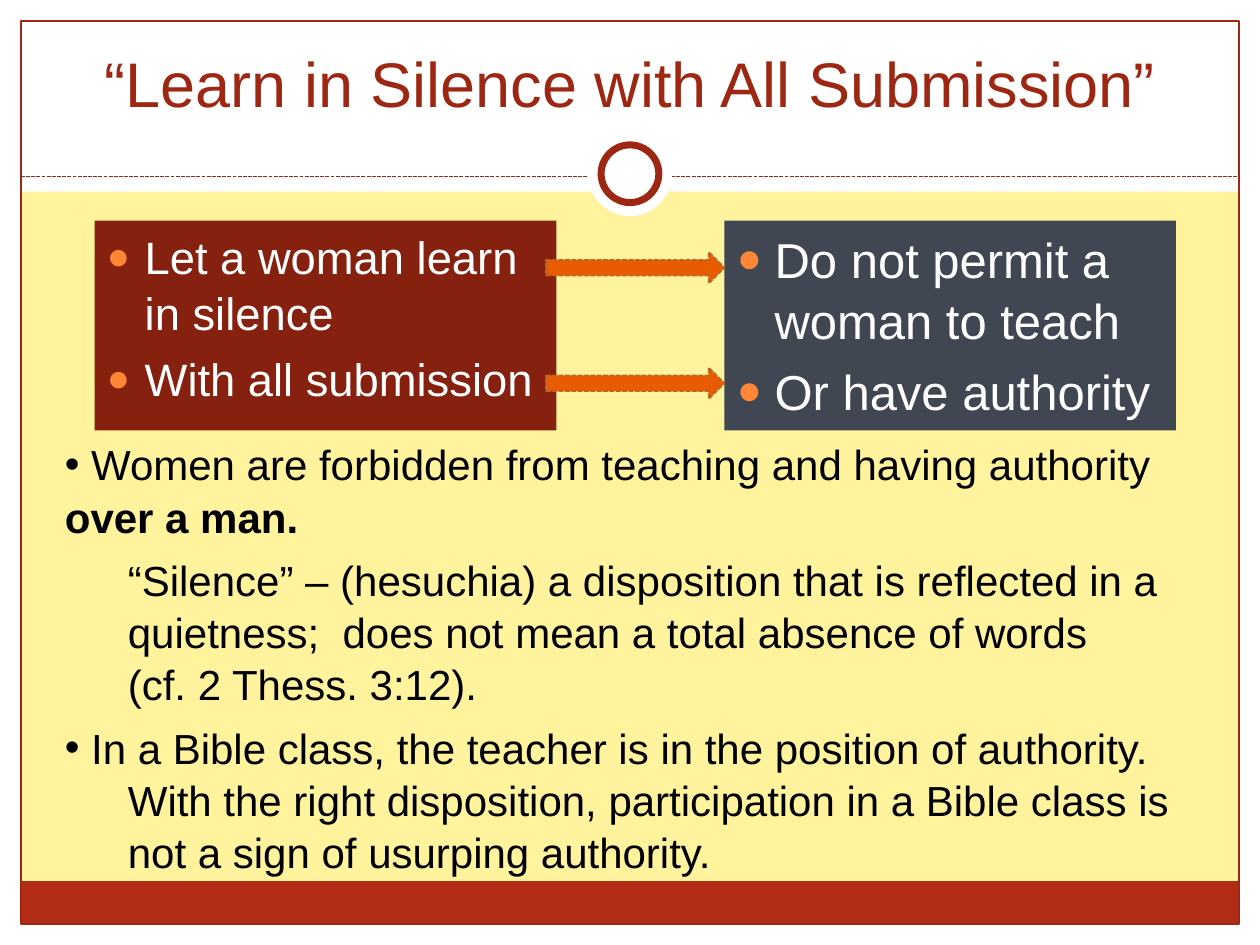
from dataclasses import dataclass
from typing import Optional

from lxml import etree
from pptx import Presentation
from pptx import util as u
from pptx.dml.color import RGBColor
from pptx.enum import dml, shapes, text
from pptx.oxml.ns import qn

WHITE = RGBColor(0xFF, 0xFF, 0xFF)
BLACK = RGBColor(0x00, 0x00, 0x00)
CREAM = RGBColor(0xFF, 0xF3, 0x9D)
RUST = RGBColor(0xB3, 0x2C, 0x16)
RUST_LINE = RGBColor(0x9E, 0x27, 0x13)
MAROON = RGBColor(0x86, 0x21, 0x10)
SLATE = RGBColor(0x41, 0x47, 0x52)
ORANGE = RGBColor(0xE7, 0x5C, 0x01)
ORANGE_LINE = RGBColor(0xBC, 0x63, 0x29)
BULLET = RGBColor(0xFE, 0x86, 0x37)

WIDTH, HEIGHT, MARGIN = 720, 540, 12
RULE_TOP = 100.8
FONT = "Arial"
LINE_SPACING = 1.04
RECT = shapes.MSO_SHAPE.RECTANGLE
OVAL = shapes.MSO_SHAPE.OVAL
ARROW = shapes.MSO_SHAPE.RIGHT_ARROW
DASH = dml.MSO_LINE.SQUARE_DOT


@dataclass
class Figure:
    kind: int
    left: float
    top: float
    width: float
    height: float
    fill: Optional[RGBColor] = None
    line: Optional[RGBColor] = None
    weight: float = 0.75
    dash: Optional[int] = None


@dataclass
class Line:
    words: str
    bullet: str = ""
    margin: float = 0
    hanging: float = 0
    bold_tail: str = ""


@dataclass
class Block:
    top: float
    height: float
    lines: list[Line]


@dataclass
class Panel:
    figure: Figure
    size: float
    points: list[str]


def draw_figure(page, figure: Figure):
    shape = page.shapes.add_shape(
        figure.kind, u.Pt(figure.left), u.Pt(figure.top),
        u.Pt(figure.width), u.Pt(figure.height))
    shape.shadow.inherit = False
    if figure.fill is None:
        shape.fill.background()
    else:
        shape.fill.solid()
        shape.fill.fore_color.rgb = figure.fill
    if figure.line is None:
        shape.line.fill.background()
    else:
        shape.line.color.rgb = figure.line
        shape.line.width = u.Pt(figure.weight)
        if figure.dash is not None:
            shape.line.dash_style = figure.dash
    return shape


def draw_rule(page) -> None:
    rule = page.shapes.add_connector(
        shapes.MSO_CONNECTOR.STRAIGHT, u.Pt(MARGIN), u.Pt(RULE_TOP),
        u.Pt(WIDTH - MARGIN), u.Pt(RULE_TOP))
    rule.line.color.rgb = RUST_LINE
    rule.line.width = u.Pt(0.75)
    rule.line.dash_style = DASH
    etree.SubElement(rule._element.spPr, qn("a:effectLst"))


def set_bullet(para, line: Line, color: Optional[RGBColor]) -> None:
    properties = para._p.get_or_add_pPr()
    properties.set("marL", str(u.Pt(line.margin)))
    properties.set("indent", str(u.Pt(-line.hanging)))
    if not line.bullet:
        return
    if color is not None:
        holder = etree.SubElement(properties, qn("a:buClr"))
        etree.SubElement(holder, qn("a:srgbClr"), val=str(color))
        etree.SubElement(properties, qn("a:buSzPct"), val="85000")
    etree.SubElement(properties, qn("a:buFont"), typeface=FONT)
    etree.SubElement(properties, qn("a:buChar"), char=line.bullet)


def write_lines(frame, lines: list[Line], size: float, color: RGBColor,
                bullet_color: Optional[RGBColor] = None, before: float = 0,
                spacing: float = LINE_SPACING,
                align: int = text.PP_ALIGN.LEFT) -> None:
    frame.word_wrap = True
    for index, line in enumerate(lines):
        para = frame.add_paragraph() if index else frame.paragraphs[0]
        para.text = line.words
        if line.bold_tail:
            tail = para.add_run()
            tail.text = line.bold_tail
            tail.font.bold = True
        para.alignment = align
        para.line_spacing = spacing
        para.space_before = u.Pt(before)
        set_bullet(para, line, bullet_color)
        for span in para.runs:
            span.font.name = FONT
            span.font.size = u.Pt(size)
            span.font.color.rgb = color


def add_box(page, left: float, top: float, width: float, height: float):
    box = page.shapes.add_textbox(
        u.Pt(left), u.Pt(top), u.Pt(width), u.Pt(height))
    return box.text_frame


def draw_panel(page, panel: Panel) -> None:
    frame = draw_figure(page, panel.figure).text_frame
    frame.vertical_anchor = text.MSO_ANCHOR.TOP
    lines = [Line(point, "●", 21.6, 21.6) for point in panel.points]
    write_lines(frame, lines, panel.size, WHITE, BULLET, panel.size * 0.2)


INNER = WIDTH - 2 * MARGIN
FRAME = [
    Figure(RECT, 0, HEIGHT - MARGIN, WIDTH, MARGIN, WHITE),
    Figure(RECT, 0, 0, WIDTH, 109.5, WHITE),
    Figure(RECT, 0, 0, MARGIN, HEIGHT, WHITE),
    Figure(RECT, WIDTH - MARGIN, 0, MARGIN, HEIGHT, WHITE),
    Figure(RECT, MARGIN, 503.5, INNER, 24.5, RUST),
    Figure(RECT, MARGIN, MARGIN, INNER, HEIGHT - 2 * MARGIN, line=RUST_LINE),
]
RINGS = [
    Figure(OVAL, 336, 75.5, 48, 48, WHITE),
    Figure(OVAL, 343.5, 82.8, 33, 33, WHITE, RUST_LINE, 4),
]
PANELS = [
    Panel(Figure(RECT, 54, 126, 264, 120, MAROON), 25.9,
          ["Let a woman learn in silence", "With all submission"]),
    Panel(Figure(RECT, 414, 126, 258, 120, SLATE), 28,
          ["Do not permit a woman to teach", "Or have authority"]),
]
ARROWS = [Figure(ARROW, 312, top, 102, 18, ORANGE, ORANGE_LINE, 0.9, DASH)
          for top in (210, 144)]
BLOCKS = [
    Block(246, 65.5, [
        Line(" Women are forbidden from teaching and having authority ", "•",
             bold_tail="over a man.")]),
    Block(312, 94.5, [
        Line("“Silence” – (hesuchia) a disposition that is reflected in a "
             "quietness;  does not mean a total absence of words\v"
             "(cf. 2 Thess. 3:12).", margin=36)]),
    Block(408, 94.5, [
        Line(" In a Bible class, the teacher is in the position of authority.",
             "•"),
        Line("With the right disposition, participation in a Bible class is "
             "not a sign of usurping authority.", margin=36)]),
]


def main() -> None:
    deck = Presentation()
    deck.slide_width, deck.slide_height = u.Pt(WIDTH), u.Pt(HEIGHT)
    page = deck.slides.add_slide(deck.slide_layouts[6])
    page.background.fill.solid()
    page.background.fill.fore_color.rgb = CREAM
    for figure in FRAME:
        draw_figure(page, figure)
    draw_rule(page)
    for figure in RINGS:
        draw_figure(page, figure)
    title = add_box(page, 24, 18, 672, 54)
    title.vertical_anchor = text.MSO_ANCHOR.BOTTOM
    write_lines(title, [Line("“Learn in Silence with All Submission”")],
                36, RUST_LINE, spacing=1, align=text.PP_ALIGN.CENTER)
    for panel in PANELS:
        draw_panel(page, panel)
    for arrow in ARROWS:
        draw_figure(page, arrow)
    for block in BLOCKS:
        frame = add_box(page, 30, block.top, 660, block.height)
        write_lines(frame, block.lines, 24, BLACK)
    deck.save("out.pptx")


if __name__ == "__main__":
    main()
